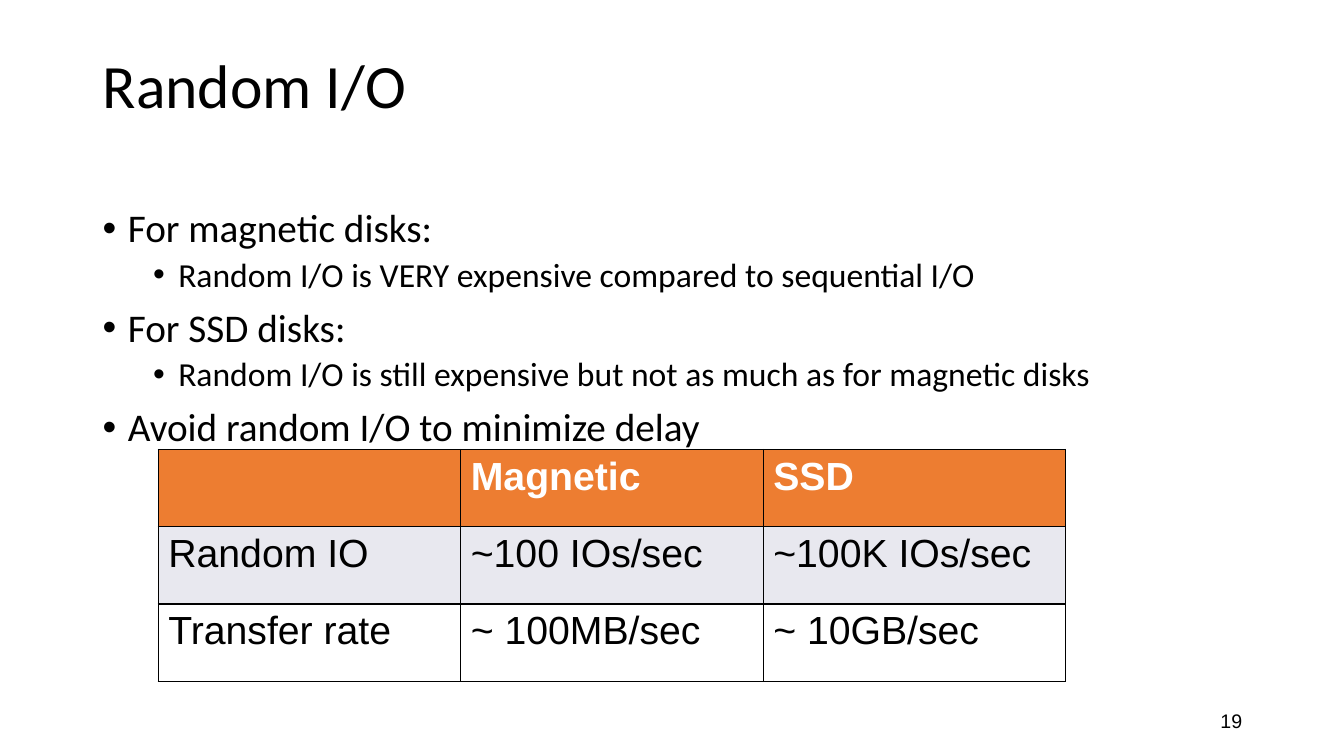
from lxml.etree import SubElement
from pptx import Presentation
from pptx.dml.color import RGBColor
from pptx.enum.text import MSO_ANCHOR, PP_ALIGN
from pptx.oxml import parse_xml
from pptx.oxml.ns import nsdecls, qn
from pptx.util import Inches, Pt

BLACK, WHITE = "000000", "FFFFFF"
HEADER_FILL, BAND_FILL = "ED7D31", "E8E8EF"
BULLETS = [
    (0, "For magnetic disks:"),
    (1, "Random I/O is VERY expensive compared to sequential I/O"),
    (0, "For SSD disks:"),
    (1, "Random I/O is still expensive but not as much as for magnetic disks"),
    (0, "Avoid random I/O to minimize delay"),
]
DISK_RATES = [
    ("", "Magnetic", "SSD"),
    ("Random IO", "~100 IOs/sec", "~100K IOs/sec"),
    ("Transfer rate", "~ 100MB/sec", "~ 10GB/sec"),
]


def color(hex_string):
    """Turn a hex string into a colour."""
    return RGBColor.from_string(hex_string)


def add_run(paragraph, text, size, font_name, hex_string=BLACK, bold=False):
    """Add one formatted run to a paragraph."""
    run = paragraph.add_run()
    run.text = text
    run.font.size = Pt(size)
    run.font.name = font_name
    run.font.bold = bold
    run.font.color.rgb = color(hex_string)


def add_text_frame(slide, left, top, width, height, anchor):
    """Add a wrapping text box and return its text frame."""
    shape = slide.shapes.add_textbox(
        Inches(left), Inches(top), Inches(width), Inches(height))
    shape.text_frame.word_wrap = True
    shape.text_frame.vertical_anchor = anchor
    return shape.text_frame


def add_title(slide, left, top, width, height):
    """Place the slide title."""
    frame = add_text_frame(slide, left, top, width, height, MSO_ANCHOR.MIDDLE)
    paragraph = frame.paragraphs[0]
    paragraph.line_spacing = 0.9
    add_run(paragraph, "Random I/O", 44, "Calibri")


def add_bullets(slide, left, top, width, height):
    """Place the two-level bullet list."""
    frame = add_text_frame(slide, left, top, width, height, MSO_ANCHOR.TOP)
    frame.margin_top = Inches(0.53)
    for index, (level, text) in enumerate(BULLETS):
        paragraph = frame.add_paragraph() if index else frame.paragraphs[0]
        paragraph.level = level
        paragraph.line_spacing = 0.9
        paragraph.space_before = Pt((10, 5)[level] if index else 0)
        properties = paragraph._p.get_or_add_pPr()
        properties.set("marL", str(Inches(0.25 + 0.5 * level)))
        properties.set("indent", str(Inches(-0.25)))
        SubElement(properties, qn("a:buFont")).set("typeface", "Arial")
        SubElement(properties, qn("a:buChar")).set("char", "•")
        add_run(paragraph, text, (28, 24)[level], "Calibri")


def add_borders(cell):
    """Draw a thin black line on each side of a cell."""
    properties = cell._tc.get_or_add_tcPr()
    for position, side in enumerate(("lnL", "lnR", "lnT", "lnB")):
        properties.insert(position, parse_xml(
            f'<a:{side} {nsdecls("a")} w="{Pt(1)}"><a:solidFill>'
            f'<a:srgbClr val="{BLACK}"/></a:solidFill></a:{side}>'))


def add_rate_table(slide, left, top, width, height):
    """Place the table comparing magnetic disks with SSDs."""
    table = slide.shapes.add_table(
        len(DISK_RATES), len(DISK_RATES[0]), Inches(left), Inches(top),
        Inches(width), Inches(height)).table
    fills = (HEADER_FILL, BAND_FILL, WHITE)
    for row_index, (texts, fill) in enumerate(zip(DISK_RATES, fills)):
        is_header = row_index == 0
        for column_index, text in enumerate(texts):
            cell = table.cell(row_index, column_index)
            cell.fill.solid()
            cell.fill.fore_color.rgb = color(fill)
            add_borders(cell)
            if text:
                add_run(cell.text_frame.paragraphs[0], text, 28, "Arial",
                        WHITE if is_header else BLACK, is_header)


def add_slide_number(slide, left, top, width, height):
    """Place the right-aligned slide number."""
    frame = add_text_frame(slide, left, top, width, height, MSO_ANCHOR.MIDDLE)
    paragraph = frame.paragraphs[0]
    paragraph.alignment = PP_ALIGN.RIGHT
    add_run(paragraph, "19", 14, "Arial")


def main():
    """Build the slide and save it."""
    presentation = Presentation()
    presentation.slide_width = Inches(13.33)
    presentation.slide_height = Inches(7.5)
    slide = presentation.slides.add_slide(presentation.slide_layouts[6])
    add_slide_number(slide, 9.42, 6.95, 3, 0.4)
    add_title(slide, 0.92, 0.33, 11.5, 1.09)
    add_bullets(slide, 0.92, 1.54, 11.5, 5.22)
    add_rate_table(slide, 1.57, 4.46, 9, 2.3)
    presentation.save("out.pptx")


if __name__ == "__main__":
    main()
